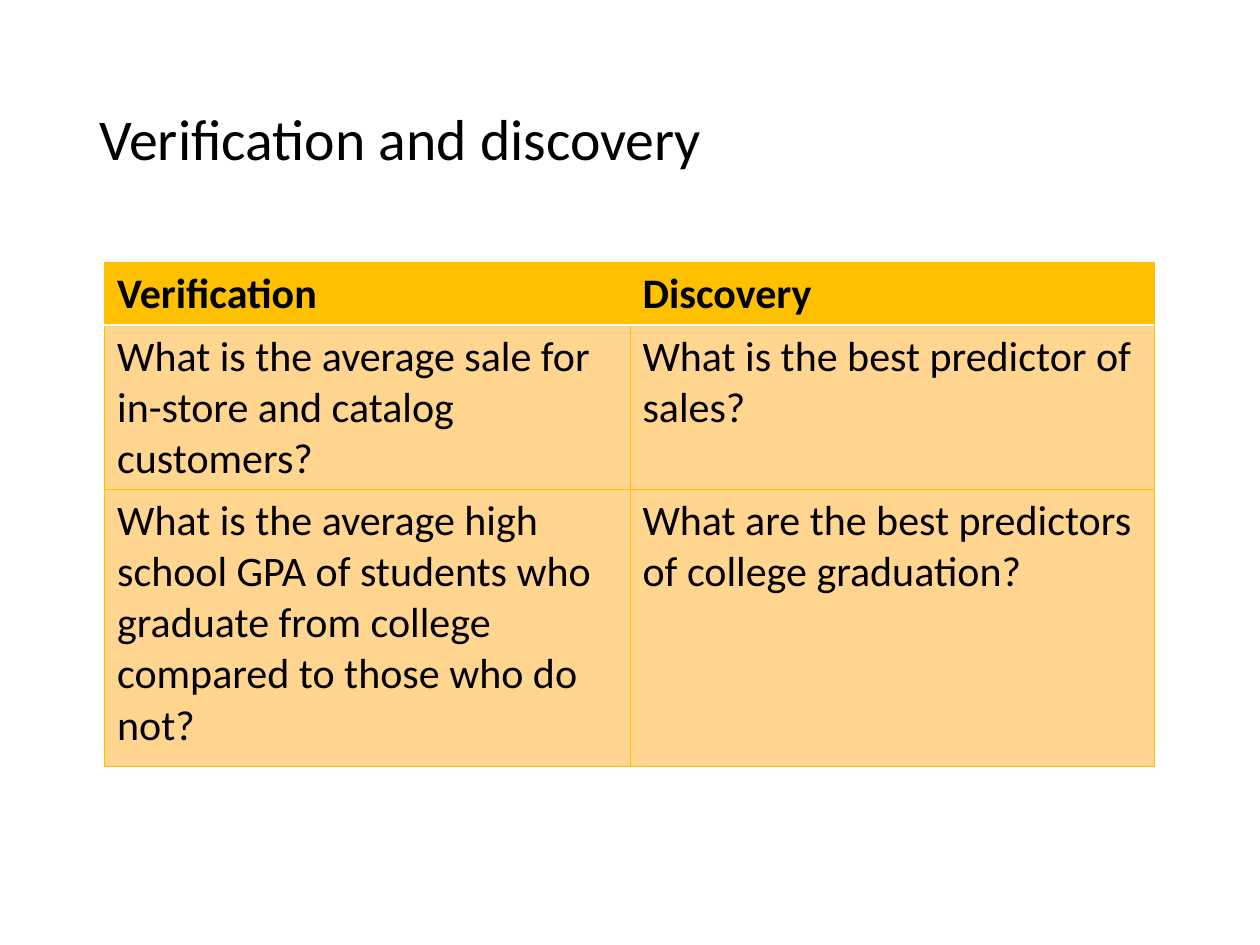
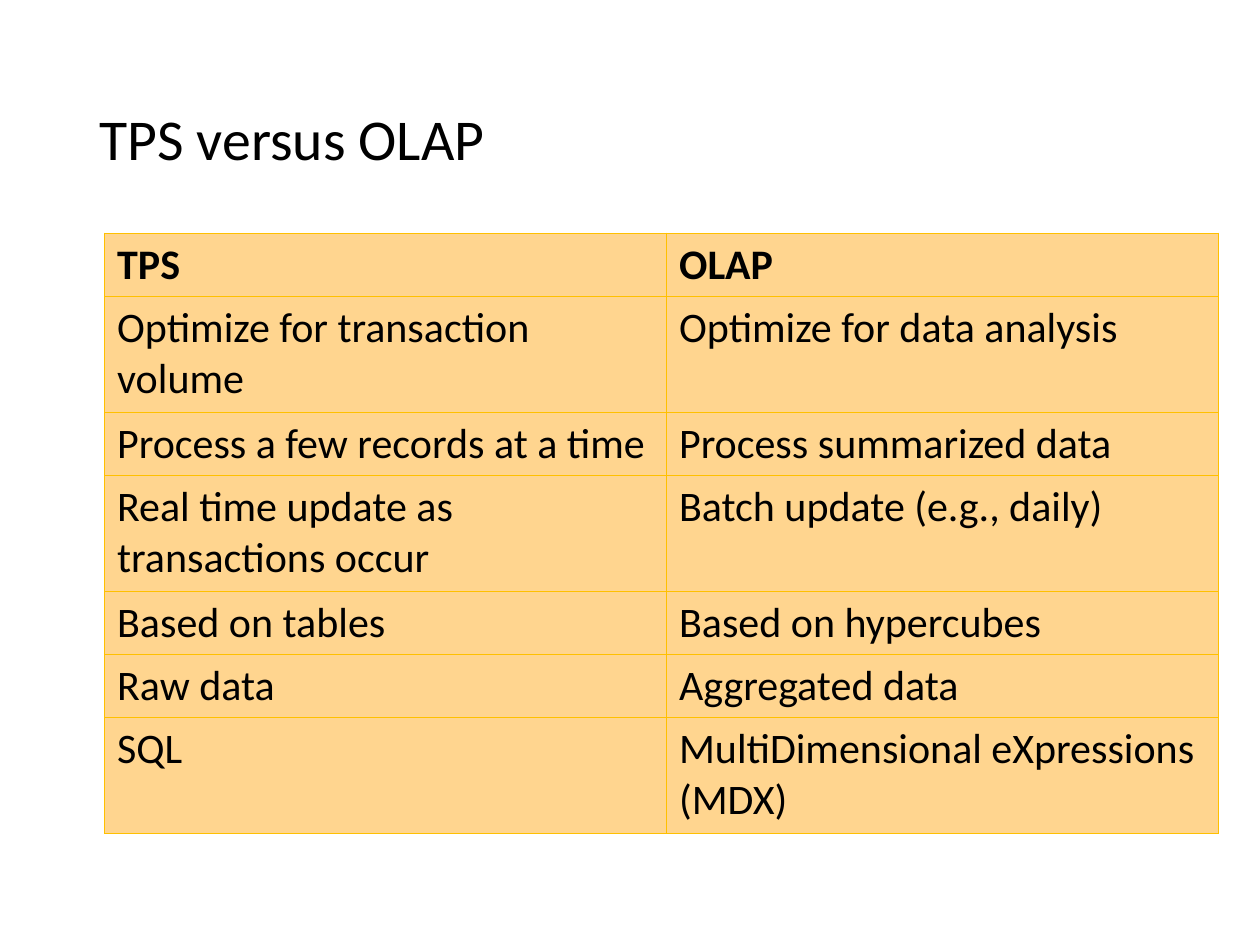
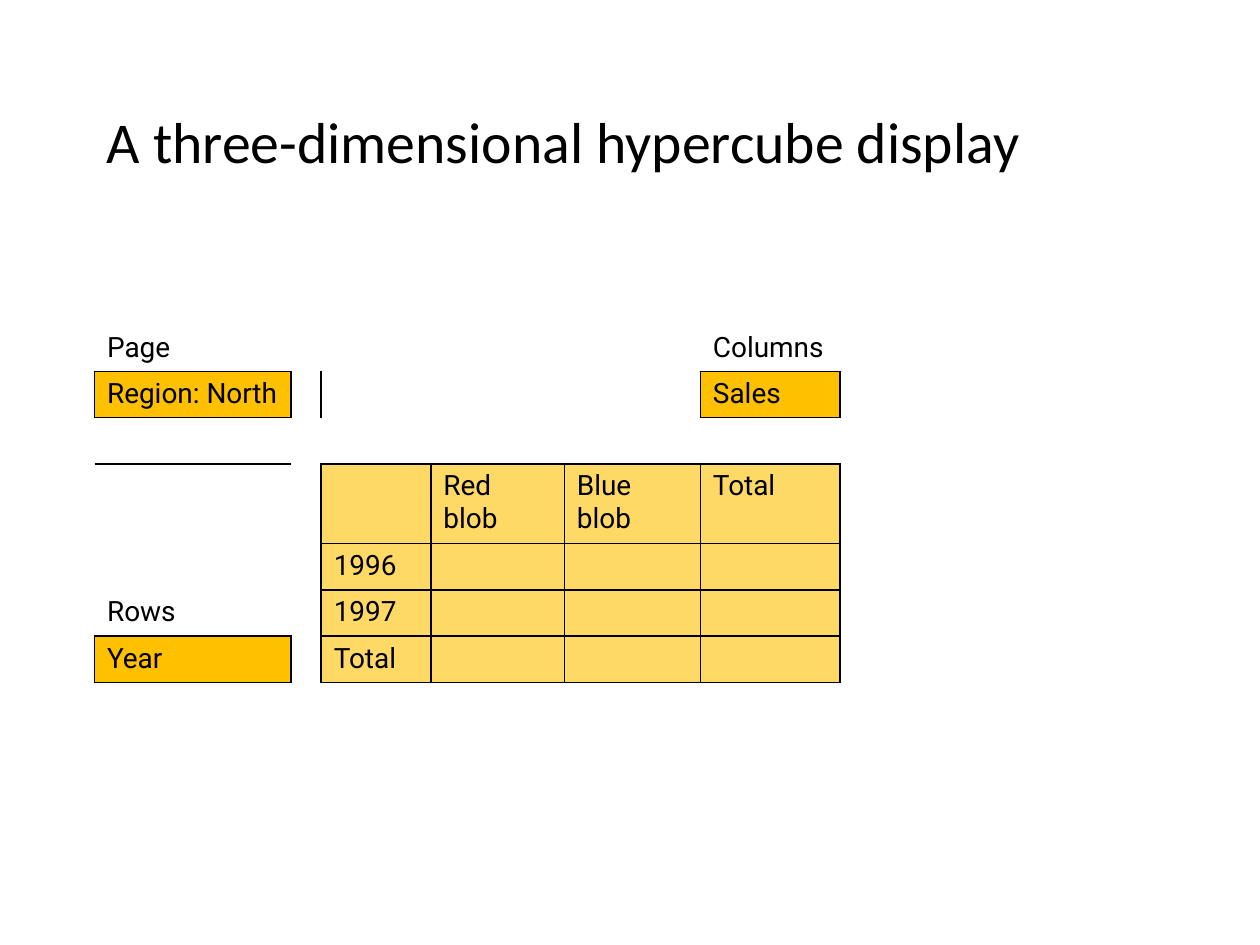
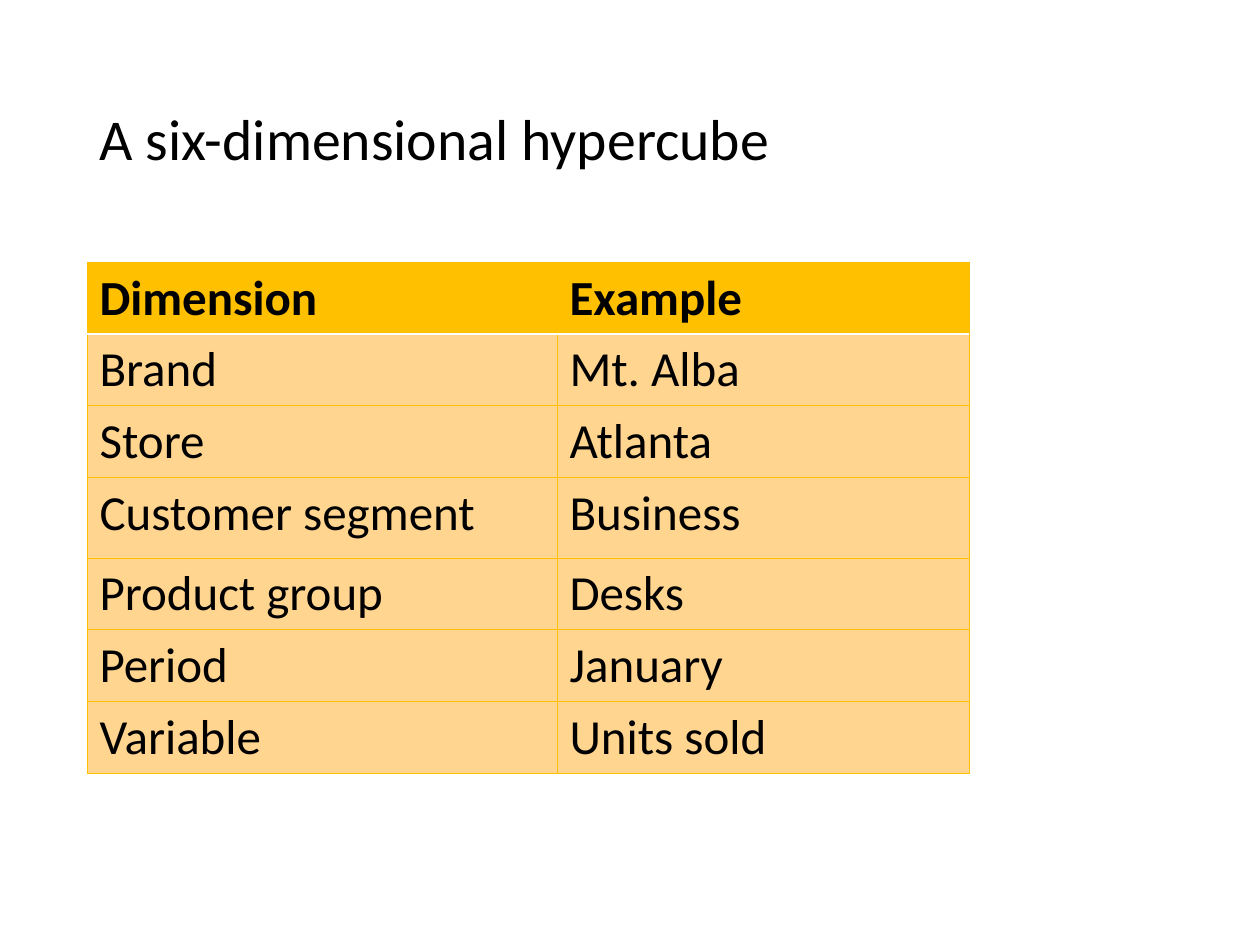
from lxml.etree import SubElement
from pptx import Presentation
from pptx.dml.color import RGBColor
from pptx.enum.text import MSO_ANCHOR, PP_ALIGN
from pptx.oxml.ns import qn
from pptx.util import Inches, Pt

COLORS = {
    "text": "000000",
    "gold": "FFC000",
    "peach": "FFD58F",
    "sand": "FFD966",
    "white": "FFFFFF",
}
FONT = "Calibri"
GRID_FONT = "Roboto"
PLAIN_STYLE = "{2D5ABB26-0587-4C30-8999-92F81FD0307C}"
SIDES = {"L": (0, -1), "R": (0, 1), "T": (-1, 0), "B": (1, 0)}


def paint(fill, color):
    fill.solid()
    fill.fore_color.rgb = RGBColor.from_string(COLORS[color])


def style(para, font, size, bold=False):
    for run in para.runs:
        run.font.name = font
        run.font.size = Pt(size)
        run.font.bold = bold
        run.font.color.rgb = RGBColor.from_string(COLORS["text"])


def add_title(slide, text, left=0.69, top=0.4):
    box = slide.shapes.add_textbox(Inches(left), Inches(top), Inches(8.62), Inches(1.45))
    frame = box.text_frame
    frame.word_wrap = True
    frame.vertical_anchor = MSO_ANCHOR.MIDDLE
    frame.text = text
    frame.paragraphs[0].line_spacing = 0.9
    style(frame.paragraphs[0], FONT, 33)


def add_edge(cell, side, color, width):
    props = cell._tc.get_or_add_tcPr()
    line = SubElement(props, qn(f"a:ln{side}"), w=str(Pt(width)))
    SubElement(SubElement(line, qn("a:solidFill")), qn("a:srgbClr"), val=COLORS[color])


def add_table(slide, left, top, cols, rows):
    """Add an unstyled table with the given column widths and row heights."""
    frame = slide.shapes.add_table(
        len(rows), len(cols), Inches(left), Inches(top),
        Inches(sum(cols)), Inches(sum(rows)))
    table = frame.table
    table.first_row = table.horz_banding = False
    table._tbl.tblPr.find(qn("a:tableStyleId")).text = PLAIN_STYLE
    for col, width in zip(table.columns, cols):
        col.width = Inches(width)
    for row, height in zip(table.rows, rows):
        row.height = Inches(height)
    return table


def set_text(cell, text, font, size, bold=False, align=None):
    para = cell.text_frame.paragraphs[0]
    if text:
        para.text = text
        para.alignment = align
        style(para, font, size, bold)
    else:
        # An empty cell needs its own text size, or it stretches the row
        end = SubElement(para._p, qn("a:endParaRPr"), sz=str(size * 100))
        SubElement(end, qn("a:latin"), typeface=font)


def add_list(slide, left, top, cols, rows, data, size=24, band=True, align=None):
    """Add a two-column table; band gives the header a gold fill and a white rule."""
    table = add_table(slide, left, top, cols, rows)
    for r, texts in enumerate(data):
        for c, text in enumerate(texts):
            cell = table.cell(r, c)
            head = band and r == 0
            for side in SIDES:
                if band and (r, side) in ((0, "B"), (1, "T")):
                    add_edge(cell, side, "white", 1)
                else:
                    add_edge(cell, side, "gold", 0.5)
            paint(cell.fill, "gold" if head else "peach")
            set_text(cell, text, FONT, size, r == 0, align)


def add_cube(slide, left, top, cols, rows, data, fills):
    """Add a table in which only the cells named in fills are painted and ruled."""
    table = add_table(slide, left, top, cols, rows)
    for r in range(len(rows)):
        for c in range(len(cols)):
            cell = table.cell(r, c)
            for side, (down, right) in SIDES.items():
                if (r, c) in fills or (r + down, c + right) in fills:
                    add_edge(cell, side, "text", 1)
            if (r, c) in fills:
                paint(cell.fill, fills[r, c])
            text = data.get((r, c), "")
            align = None if "blob" in text else PP_ALIGN.JUSTIFY
            set_text(cell, text, GRID_FONT, 16, align=align)


def main():
    deck = Presentation()
    deck.slide_width, deck.slide_height = Inches(10), Inches(7.5)
    blank = deck.slide_layouts[6]

    slide = deck.slides.add_slide(blank)
    add_title(slide, "Verification and discovery")
    add_list(slide, 0.83, 2.08, [4.17, 4.16], [0.5, 1.3, 2.2], [
        ("Verification", "Discovery"),
        ("What is the average sale for in-store and catalog customers?",
         "What is the best predictor of sales?"),
        ("What is the average high school GPA of students who graduate "
         "from college compared to those who do not?",
         "What are the best predictors of college graduation?"),
    ])

    slide = deck.slides.add_slide(blank)
    add_title(slide, "TPS versus OLAP")
    short, tall = 0.5, 0.92
    add_list(slide, 0.83, 1.85, [4.46, 4.38],
             [short, tall, short, tall, short, short, tall], [
        ("TPS", "OLAP"),
        ("Optimize for transaction volume", "Optimize for data analysis"),
        ("Process a few records at a time", "Process summarized data"),
        ("Real time update as transactions occur", "Batch update (e.g., daily)"),
        ("Based on tables", "Based on hypercubes"),
        ("Raw data", "Aggregated data"),
        ("SQL", "MultiDimensional eXpressions (MDX)"),
    ], band=False)

    slide = deck.slides.add_slide(blank)
    add_title(slide, "A three-dimensional hypercube display", 0.75, 0.42)
    fills = {(r, c): "sand" for r in range(3, 7) for c in range(2, 6)}
    fills.update({(1, 0): "gold", (1, 5): "gold", (6, 0): "gold"})
    add_cube(slide, 0.75, 2.58, [1.56, 0.23, 0.87, 1.06, 1.08, 1.11],
             [0.36] * 3 + [0.62] + [0.36] * 3, {
        (0, 0): "Page", (1, 0): "Region: North",
        (0, 5): "Columns", (1, 5): "Sales",
        (5, 0): "Rows", (6, 0): "Year",
        (3, 3): "Red blob", (3, 4): "Blue blob", (3, 5): "Total",
        (4, 2): "1996", (5, 2): "1997", (6, 2): "Total",
    }, fills)

    slide = deck.slides.add_slide(blank)
    add_title(slide, "A six-dimensional hypercube")
    add_list(slide, 0.69, 2.08, [3.73, 3.27], [0.57] * 3 + [0.64] + [0.57] * 3, [
        ("Dimension", "Example"),
        ("Brand", "Mt. Alba"),
        ("Store", "Atlanta"),
        ("Customer segment", "Business"),
        ("Product group", "Desks"),
        ("Period", "January"),
        ("Variable", "Units sold"),
    ], size=28, align=PP_ALIGN.JUSTIFY)

    deck.save("out.pptx")


if __name__ == "__main__":
    main()
